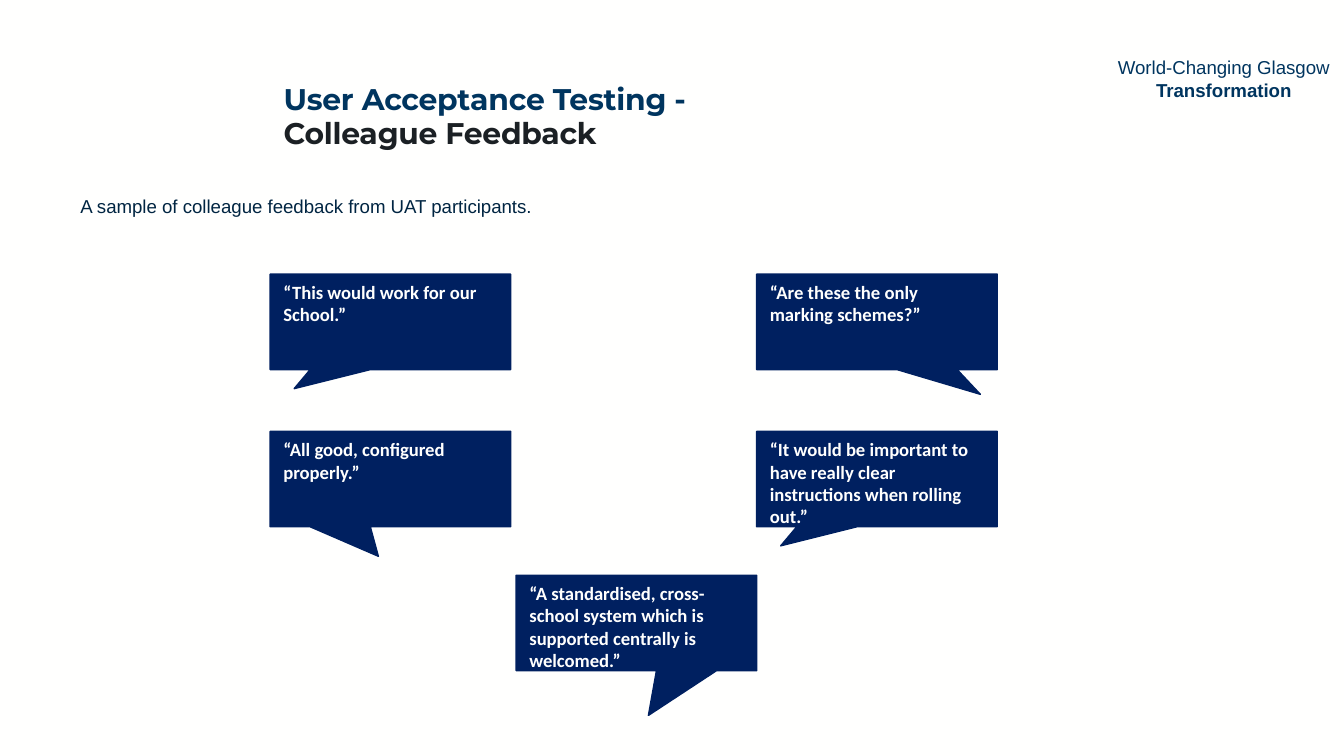
from pptx import Presentation
from pptx.dml.color import RGBColor
from pptx.enum.shapes import MSO_SHAPE as SHAPE
from pptx.enum.text import MSO_ANCHOR as ANCHOR, MSO_AUTO_SIZE as AUTO, PP_ALIGN as ALIGN
from pptx.util import Inches, Pt

COLORS = {
    "background": "FFFFFE",
    "brand": "00355F",
    "heading": "1B2024",
    "body": "002542",
    "callout": "002060",
}

LEFT, MIDDLE, RIGHT = 2.01, 3.84, 5.63
ROWS = (2.04, 3.21, 4.28)

# Left, top, pointer tip (relative to the callout's centre), quote
QUOTES = [
    (LEFT, ROWS[0], (-0.4, 0.7), "“This would work for our School.”"),
    (RIGHT, ROWS[0], (0.43, 0.76), "“Are these the only marking schemes?”"),
    (LEFT, ROWS[1], (-0.05, 0.81), "“All good, configured properly.”"),
    (RIGHT, ROWS[1], (-0.4, 0.7),
     "“It would be important to have really clear instructions when rolling out.”"),
    (MIDDLE, ROWS[2], (0.05, 0.97),
     "“A standardised, cross-school system which is supported centrally is welcomed.”"),
]


def rgb(name):
    return RGBColor.from_string(COLORS[name])


def add_run(p, text, color, size=10, font="Arial", bold=False, spacing=None):
    r = p.add_run()
    r.text = text
    r.font.name, r.font.size, r.font.bold = font, Pt(size), bold
    r.font.color.rgb = rgb(color)
    if spacing is not None:
        r._r.get_or_add_rPr().set("spc", str(round(spacing * 100)))
    return r


def add_text_box(slide, x, y, w, h, align=ALIGN.LEFT):
    tf = slide.shapes.add_textbox(Inches(x), Inches(y), Inches(w), Inches(h)).text_frame
    tf.word_wrap = True
    p = tf.paragraphs[0]
    p.alignment = align
    return p


def format_title(slide):
    sp = slide.shapes.title
    sp.left, sp.top = Inches(2.01), Inches(0.53)
    sp.width, sp.height = Inches(6.23), Inches(0.71)
    tf = sp.text_frame
    tf.auto_size, tf.vertical_anchor = AUTO.NONE, ANCHOR.MIDDLE
    tf.margin_bottom = Inches(0.11)
    p = tf.paragraphs[0]
    p.alignment, p.line_spacing = ALIGN.LEFT, 0.9
    style = dict(size=16, font="Montserrat", bold=True, spacing=-0.1)
    add_run(p, "User Acceptance Testing -", "brand", **style)
    add_run(p, " ", "brand", size=20, bold=True, spacing=-0.1)
    p.add_line_break()
    add_run(p, "Colleague Feedback", "heading", **style)


def add_callout(slide, x, y, tip, quote):
    sp = slide.shapes.add_shape(SHAPE.RECTANGULAR_CALLOUT, Inches(x), Inches(y),
                                Inches(1.79), Inches(0.71))
    sp.adjustments[0], sp.adjustments[1] = tip
    sp.shadow.inherit = False
    sp.fill.solid()
    sp.fill.fore_color.rgb = rgb("callout")
    sp.line.color.rgb = rgb("callout")
    sp.line.width = Pt(0.75)
    tf = sp.text_frame
    tf.word_wrap, tf.vertical_anchor = True, ANCHOR.TOP
    p = tf.paragraphs[0]
    p.alignment = ALIGN.LEFT
    add_run(p, quote, "background", font="Calibri", bold=True)


def main():
    # Widescreen slide, 16:9
    prs = Presentation()
    prs.slide_width = Inches(10)
    prs.slide_height = Inches(10 * 9 / 16)
    slide = prs.slides.add_slide(prs.slide_layouts[5])
    slide.background.fill.solid()
    slide.background.fill.fore_color.rgb = rgb("background")

    # Programme name in the corner
    p = add_text_box(slide, 8.18, 0.37, 1.85, 0.44, align=ALIGN.CENTER)
    add_run(p, "World-Changing Glasgow ", "brand")
    add_run(p, "Transformation", "brand", bold=True)

    # Title and introduction
    format_title(slide)
    p = add_text_box(slide, 0.5, 1.4, 9.25, 0.27)
    add_run(p, "A sample of colleague feedback from UAT participants.", "body")

    # Feedback quotes
    for quote in QUOTES:
        add_callout(slide, *quote)

    prs.save("out.pptx")


if __name__ == "__main__":
    main()
